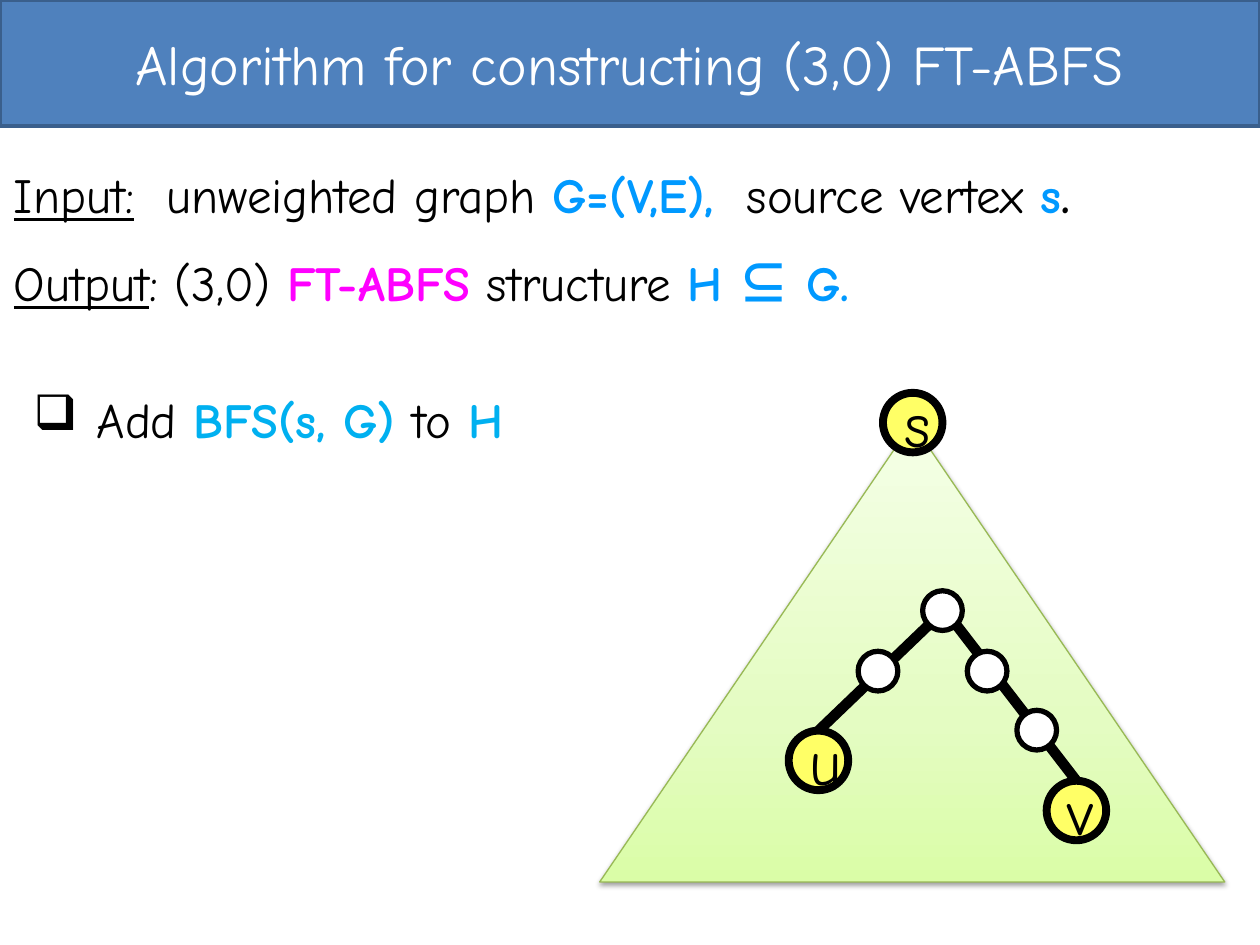
from lxml import etree
from pptx import Presentation
from pptx.dml.color import RGBColor
from pptx.enum.shapes import MSO_CONNECTOR, MSO_SHAPE
from pptx.enum.text import MSO_ANCHOR, MSO_AUTO_SIZE, PP_ALIGN
from pptx.oxml.ns import qn
from pptx.util import Cm, Pt

LINE = MSO_CONNECTOR.STRAIGHT
OVAL = MSO_SHAPE.OVAL
TRIANGLE = MSO_SHAPE.ISOSCELES_TRIANGLE
MIDDLE = MSO_ANCHOR.MIDDLE
CENTER = PP_ALIGN.CENTER
NO_FIT = MSO_AUTO_SIZE.NONE
GROW = MSO_AUTO_SIZE.SHAPE_TO_FIT_TEXT
TITLE_ONLY = 5

FONT = "Comic Neue"
SYMBOL_FONT = "Noto Sans CJK KR"
BLACK, WHITE, YELLOW = "000000", "FFFFFF", "FFFF66"
BLUE, CYAN, PINK = "0099FF", "00B0F0", "FF00FF"


def rgb(color):
    return RGBColor.from_string(color)


def add_run(p, text, size=28, color=BLACK, font=FONT, bold=False, underline=False):
    r = p.add_run()
    r.text = text
    r.font.size = Pt(size)
    r.font.name = font
    r.font.bold = bold
    r.font.underline = underline
    r.font.color.rgb = rgb(color)


def add_xml(parent, tag, **attrs):
    return etree.SubElement(parent, qn(tag), attrs)


class SlideBuilder:
    def __init__(self, slide):
        self.s = slide

    def outline(self, sp, color, width):
        sp.line.color.rgb = rgb(color)
        sp.line.width = Pt(width)

    def title(self, text, height):
        sp = self.s.shapes.title
        sp.left, sp.top, sp.width, sp.height = Cm(0), Cm(0), Cm(25.4), Cm(height)
        sp.fill.solid()
        sp.fill.fore_color.rgb = rgb("4F81BD")
        self.outline(sp, "3A5F8C", 2)
        tf = sp.text_frame
        tf.auto_size = NO_FIT
        tf.vertical_anchor = MIDDLE
        p = tf.paragraphs[0]
        p.alignment = CENTER
        add_run(p, text, size=32, color=WHITE)

    def text(self, x, y, w, h, paragraphs, spacing=1.0, bullet=None):
        sp = self.s.shapes.add_textbox(Cm(x), Cm(y), Cm(w), Cm(h))
        tf = sp.text_frame
        tf.word_wrap = True
        tf.auto_size = GROW
        for i, runs in enumerate(paragraphs):
            p = tf.add_paragraph() if i else tf.paragraphs[0]
            p.line_spacing = spacing
            if bullet:
                pPr = p._p.get_or_add_pPr()
                pPr.set("marL", str(Cm(1.27)))
                pPr.set("indent", str(-Cm(1.27)))
                add_xml(pPr, "a:buChar", char=bullet)
            for text, style in runs:
                add_run(p, text, **style)

    def triangle(self, x, y, w, h, stops):
        sp = self.s.shapes.add_shape(TRIANGLE, Cm(x), Cm(y), Cm(w), Cm(h))
        self.outline(sp, "98B955", 0.75)
        sp.fill.gradient()
        sp.fill.gradient_angle = 90
        spPr = sp._element.spPr
        gsLst = spPr.find(qn("a:gradFill")).find(qn("a:gsLst"))
        gsLst.clear()
        for percent, color in stops:
            gs = add_xml(gsLst, "a:gs", pos=str(percent * 1000))
            add_xml(gs, "a:srgbClr", val=color)
        effects = add_xml(spPr, "a:effectLst")
        shadow = add_xml(effects, "a:outerShdw", blurRad=str(Pt(3.1)),
                         dist=str(Pt(1.6)), dir="5400000", rotWithShape="0")
        clr = add_xml(shadow, "a:srgbClr", val=BLACK)
        add_xml(clr, "a:alpha", val="38000")

    def node(self, cx, cy, label=""):
        size, fill, width = (1.2, YELLOW, 4.5) if label else (0.8, WHITE, 3)
        sp = self.s.shapes.add_shape(OVAL, Cm(cx - size / 2), Cm(cy - size / 2), Cm(size), Cm(size))
        sp.shadow.inherit = False
        sp.fill.solid()
        sp.fill.fore_color.rgb = rgb(fill)
        self.outline(sp, BLACK, width)
        if label:
            tf = sp.text_frame
            tf.vertical_anchor = MIDDLE
            p = tf.paragraphs[0]
            p.alignment = CENTER
            add_run(p, label, size=36)
        return sp

    def edge(self, node, x, y):
        cxn = self.s.shapes.add_connector(LINE, Cm(0), Cm(0), Cm(x), Cm(y))
        cxn.begin_connect(node, 0)
        self.outline(cxn, BLACK, 6)
        add_xml(cxn._element.spPr, "a:effectLst")


def main():
    prs = Presentation()
    prs.slide_width, prs.slide_height = Cm(25.4), Cm(19.05)
    b = SlideBuilder(prs.slides.add_slide(prs.slide_layouts[TITLE_ONLY]))

    plain = {}
    under = {"underline": True}
    blue = {"color": BLUE, "bold": True}
    cyan = {"color": CYAN, "bold": True}

    b.title("Algorithm for constructing (3,0) FT-ABFS", 2.54)
    b.text(0.03, 2.59, 25.37, 3.84, [
        [("Input:", under), ("  unweighted graph ", plain), ("G=(V,E),", blue),
         ("  source vertex ", plain), ("s", blue), (".", {"bold": True})],
        [("Output", under), (": (3,0) ", plain), ("FT-ABFS", {"color": PINK, "bold": True}),
         (" structure ", plain), ("H ", blue), ("⊆", {**blue, "font": SYMBOL_FONT}), (" G.", blue)],
    ], spacing=1.5)
    b.text(0.43, 7.72, 24.51, 3.45, [
        [("Add ", plain), ("BFS(s, G) ", cyan), ("to", plain), (" H", cyan)],
    ], bullet="❑")

    b.triangle(12.09, 8.53, 12.6, 9.25, [(0, "DAFDA7"), (35, "E4FCC2"), (100, "F5FFE7")])
    b.node(18.4, 8.52, "s")
    u = b.node(16.5, 15.33, "u")
    v = b.node(21.7, 16.34, "v")
    b.node(19, 12.31)
    b.edge(v, 19.28, 12.6)
    b.edge(u, 18.72, 12.6)
    for cx, cy in [(19.9, 13.53), (20.9, 14.72), (17.7, 13.53)]:
        b.node(cx, cy)

    prs.save("out.pptx")


if __name__ == "__main__":
    main()
